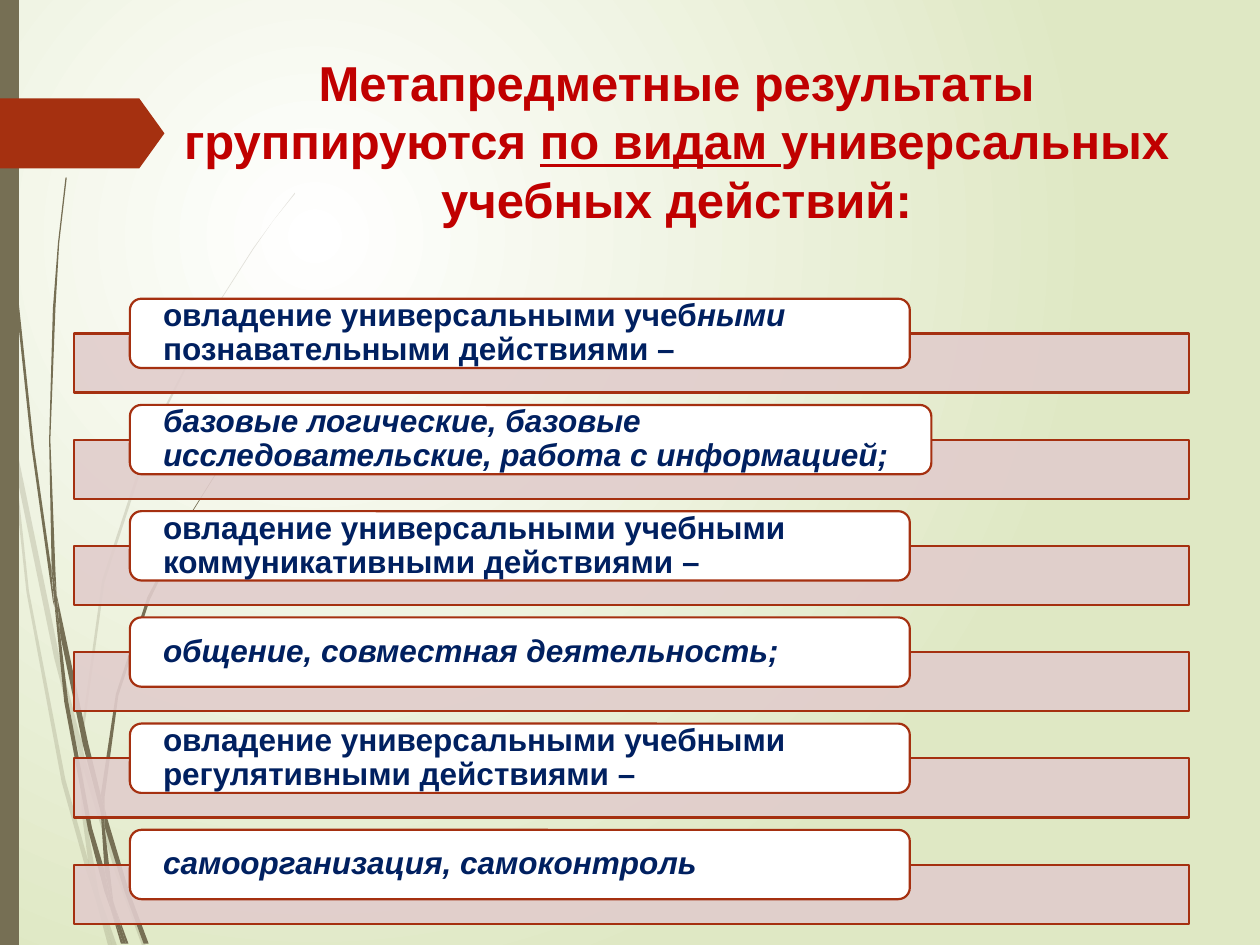
from pptx import Presentation
from pptx.dml.color import RGBColor
from pptx.enum.shapes import MSO_SHAPE as Shape
from pptx.enum.text import MSO_ANCHOR as Anchor, MSO_AUTO_SIZE as AutoSize, PP_ALIGN as Align
from pptx.oxml import parse_xml
from pptx.oxml.ns import nsdecls, qn
from pptx.util import Pt

WHITE = RGBColor(0xFF, 0xFF, 0xFF)
PALE_GREEN = RGBColor(0xDF, 0xE8, 0xC4)
OLIVE = RGBColor(0x76, 0x6F, 0x54)
RUST = RGBColor(0xA5, 0x30, 0x10)
ROSE = RGBColor(0xE1, 0xCD, 0xCC)
RED = RGBColor(0xC0, 0x00, 0x00)
NAVY = RGBColor(0x00, 0x20, 0x60)

# Runs are (text, style letters): i = italic, u = underlined
TITLE = [
    ("Метапредметные результаты группируются ", ""),
    ("по видам ", "u"),
    ("универсальных учебных действий:", ""),
]
CARD_WIDTH = 445.7
CARDS = [
    (CARD_WIDTH, [("овладение универсальными учеб", ""), ("ными ", "i"),
                  ("познавательными действиями –", "")]),
    (458, [("базовые логические, базовые исследовательские, работа с информацией;", "i")]),
    (CARD_WIDTH, [("овладение универсальными учебными коммуникативными действиями –", "")]),
    (CARD_WIDTH, [("общение, совместная деятельность;", "i")]),
    (CARD_WIDTH, [("овладение универсальными учебными регулятивными действиями –", "")]),
    (CARD_WIDTH, [("самоорганизация, самоконтроль", "i")]),
]
ROW_PITCH = 60.7
CARD_LEFT, CARD_TOP, CARD_HEIGHT = 74.2, 170.7, 39.6
BAR_LEFT, BAR_TOP, BAR_WIDTH, BAR_HEIGHT = 42.3, 190.6, 637.2, 33.8

# Outlines of the grass blades, on a grid of 0.72 pt
GRASS_UNIT = Pt(0.72)
PALE_BLADES = [
    [(8, 350), (6, 322), (0, 282), (0, 299), (8, 344)],
    [(43, 522), (63, 599), (64, 586), (47, 520), (11, 345), (13, 376)],
    [(69, 607), (66, 596), (66, 610), (92, 694), (113, 751), (116, 751), (95, 692)],
    [(89, 751), (93, 751), (79, 711)],
    [(70, 683), (52, 619), (23, 469), (13, 376), (8, 350), (21, 470), (49, 621), (69, 693),
     (76, 714), (74, 707)],
    [(63, 599), (65, 646), (70, 683), (72, 692), (79, 711), (78, 706), (68, 646), (66, 610),
     (66, 608)],
    [(66, 584), (83, 462), (120, 349), (171, 245), (201, 198), (217, 175), (234, 154),
     (234, 153), (217, 175), (201, 197), (171, 244), (118, 348), (81, 461), (64, 584),
     (64, 586), (66, 596)],
    [(76, 714), (86, 751), (89, 751)],
    [(66, 608), (66, 610), (66, 596), (64, 586), (63, 599)],
    [(72, 692), (70, 683), (74, 707), (76, 714), (89, 751), (79, 711)],
]
DARK_BLADES = [
    [(5, 110), (12, 233), (25, 355), (42, 477), (43, 481), (41, 457), (41, 453), (27, 355),
     (14, 232), (6, 109), (3, 48), (3, 0), (2, 0), (3, 48)],
    [(66, 592), (80, 645), (80, 633), (80, 631), (70, 590), (45, 472), (48, 505)],
    [(85, 649), (83, 641), (83, 656), (99, 708), (114, 749), (118, 749), (102, 706)],
    [(83, 691), (73, 657), (54, 556), (48, 505), (43, 477), (51, 557), (70, 659), (83, 708),
     (88, 722), (87, 717)],
    [(45, 472), (44, 453), (40, 349), (44, 245), (47, 193), (53, 141), (52, 141), (46, 193),
     (42, 245), (39, 349), (41, 449)],
    [(100, 749), (102, 749), (91, 719)],
    [(43, 477), (48, 505), (45, 472), (41, 449), (41, 453)],
    [(83, 633), (94, 552), (119, 476), (153, 406), (173, 374), (184, 359), (196, 344),
     (195, 344), (184, 358), (173, 373), (153, 405), (117, 474), (92, 551), (80, 631),
     (83, 641)],
    [(88, 722), (96, 749), (98, 749)],
    [(80, 645), (83, 691), (87, 706), (91, 719), (90, 716), (83, 656), (81, 651)],
    [(80, 645), (81, 651), (83, 656), (83, 641), (80, 631), (80, 633)],
    [(87, 706), (83, 691), (87, 717), (88, 722), (98, 749), (100, 749), (91, 719)],
]


def paint(shape, color, opacity=100, line=None):
    shape.shadow.inherit = False
    shape.fill.solid()
    shape.fill.fore_color.rgb = color
    if opacity < 100:
        color_element = next(shape.element.spPr.iter(qn("a:srgbClr")))
        color_element.append(parse_xml(f'<a:alpha {nsdecls("a")} val="{opacity * 1000}"/>'))
    if line is None:
        shape.line.fill.background()
    else:
        shape.line.color.rgb = line
        shape.line.width = Pt(1.25)


def add_box(shapes, kind, left, top, width, height, color, **style):
    shape = shapes.add_shape(kind, Pt(left), Pt(top), Pt(width), Pt(height))
    paint(shape, color, **style)
    return shape


def add_blade(shapes, outline, opacity):
    builder = shapes.build_freeform(*outline[0], scale=GRASS_UNIT)
    builder.add_line_segments(outline[1:], close=True)
    paint(builder.convert_to_shape(), OLIVE, opacity)


def write(shape, runs, *, size, color, align, anchor, inset, spacing=1.0):
    frame = shape.text_frame
    frame.word_wrap = True
    frame.auto_size = AutoSize.NONE
    frame.vertical_anchor = anchor
    frame.margin_left = frame.margin_right = Pt(inset[0])
    frame.margin_top = frame.margin_bottom = Pt(inset[1])
    paragraph = frame.paragraphs[0]
    paragraph.alignment = align
    paragraph.line_spacing = spacing
    for text, style in runs:
        run = paragraph.add_run()
        run.text = text
        font = run.font
        font.name, font.size, font.bold = "Arial", Pt(size), True
        font.italic, font.underline = "i" in style, "u" in style
        font.color.rgb = color


def set_background(slide):
    fill = slide.background.fill
    fill.gradient()
    for stop, color, position in zip(fill.gradient_stops, (WHITE, PALE_GREEN), (0, 1)):
        stop.color.rgb = color
        stop.position = position
    linear = next(slide.element.iter(qn("a:lin")))
    linear.getparent().replace(linear, parse_xml(
        f'<a:path {nsdecls("a")} path="circle">'
        '<a:fillToRect l="50000" t="50000" r="100000" b="100000"/></a:path>'))


def main():
    presentation = Presentation()
    presentation.slide_width, presentation.slide_height = Pt(720), Pt(540)
    slide = presentation.slides.add_slide(presentation.slide_layouts[5])
    shapes = slide.shapes
    set_background(slide)

    for blades, opacity in ((PALE_BLADES, 20), (DARK_BLADES, 100)):
        for outline in blades:
            add_blade(shapes, outline, opacity)
    add_box(shapes, Shape.RECTANGLE, 0, 0, 10.8, 540, OLIVE)
    tag = add_box(shapes, Shape.PENTAGON, 0, 56.2, 94, 40, RUST)
    tag.adjustments[0] = 0.36

    title = shapes.title
    title.left, title.top, title.width, title.height = Pt(93.6), Pt(26.2), Pt(586), Pt(124)
    write(title, TITLE, size=28, color=RED, align=Align.CENTER, anchor=Anchor.TOP,
          inset=(7.2, 3.6))

    for row, (width, runs) in enumerate(CARDS):
        offset = row * ROW_PITCH
        add_box(shapes, Shape.RECTANGLE, BAR_LEFT, BAR_TOP + offset, BAR_WIDTH, BAR_HEIGHT,
                ROSE, opacity=90, line=RUST)
        card = add_box(shapes, Shape.ROUNDED_RECTANGLE, CARD_LEFT, CARD_TOP + offset, width,
                       CARD_HEIGHT, WHITE, line=RUST)
        write(card, runs, size=18, color=NAVY, align=Align.LEFT, anchor=Anchor.MIDDLE,
              inset=(17, 0), spacing=0.9)

    presentation.save("out.pptx")


if __name__ == "__main__":
    main()
